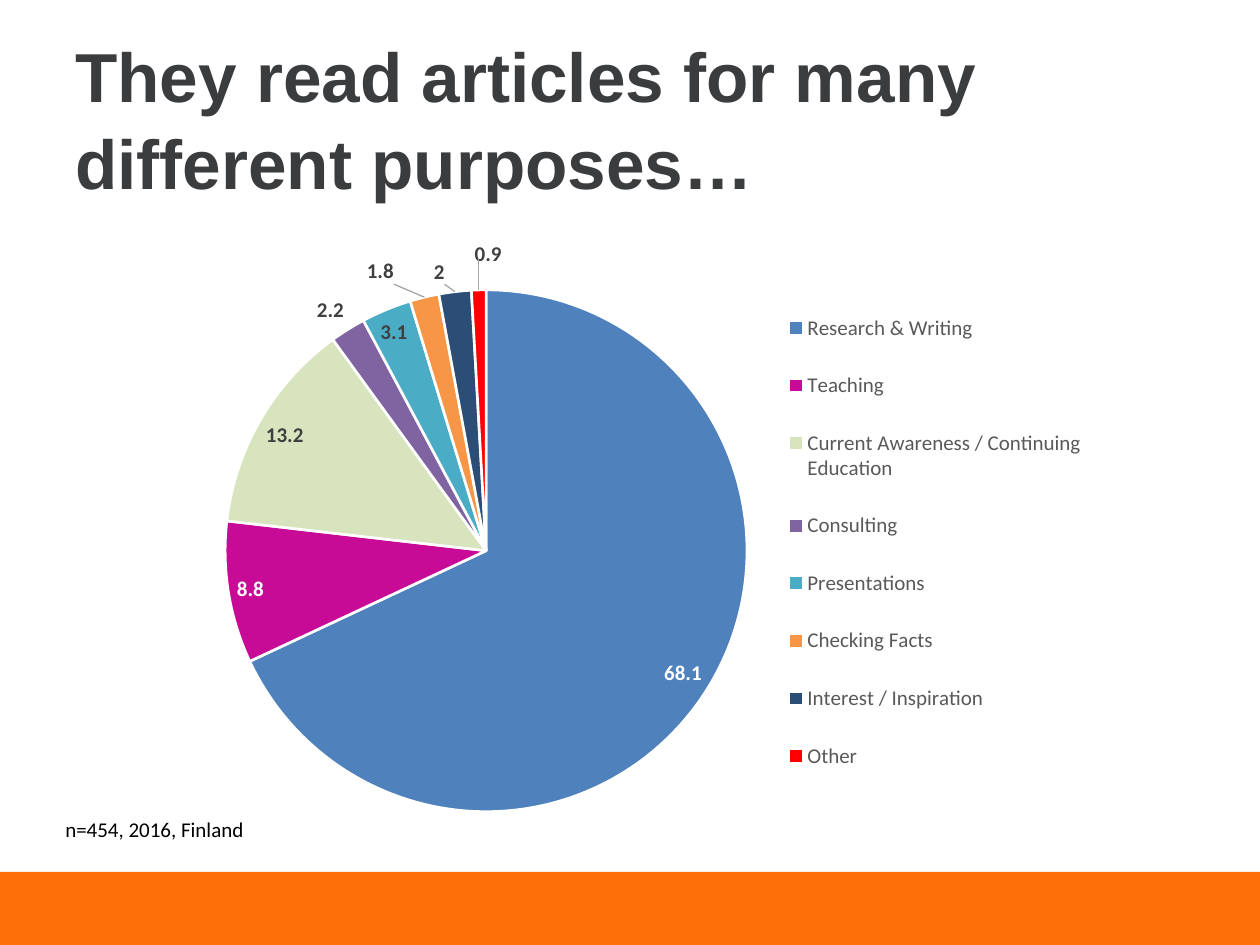
from pptx import Presentation
from pptx.chart.data import CategoryChartData
from pptx.dml.color import RGBColor
from pptx.enum.chart import XL_CHART_TYPE, XL_LABEL_POSITION, XL_LEGEND_POSITION
from pptx.enum.shapes import MSO_SHAPE
from pptx.enum.text import MSO_ANCHOR
from pptx.oxml import parse_xml
from pptx.oxml.ns import nsdecls
from pptx.util import Inches, Pt

PIE = XL_CHART_TYPE.PIE
FIT = XL_LABEL_POSITION.BEST_FIT
OUT = XL_LABEL_POSITION.OUTSIDE_END
RIGHT = XL_LEGEND_POSITION.RIGHT
RECT = MSO_SHAPE.RECTANGLE
TOP, MIDDLE = MSO_ANCHOR.TOP, MSO_ANCHOR.MIDDLE

BLACK = RGBColor(0x00, 0x00, 0x00)
WHITE = RGBColor(0xFF, 0xFF, 0xFF)
ORANGE = RGBColor(0xFD, 0x6D, 0x08)
INK = RGBColor(0x3B, 0x3C, 0x3E)
DARK = RGBColor(0x40, 0x40, 0x40)
GREY = RGBColor(0x59, 0x59, 0x59)
BLUE = RGBColor(0x4F, 0x81, 0xBD)
PINK = RGBColor(0xC7, 0x0B, 0x96)
LIME = RGBColor(0xD7, 0xE4, 0xBD)
PURPLE = RGBColor(0x80, 0x64, 0xA2)
TEAL = RGBColor(0x4B, 0xAC, 0xC6)
AMBER = RGBColor(0xF7, 0x96, 0x46)
NAVY = RGBColor(0x2C, 0x4D, 0x75)
RED = RGBColor(0xFF, 0x00, 0x00)

SLICES = [
    ("Research & Writing", 68.1, BLUE),
    ("Teaching", 8.8, PINK),
    ("Current Awareness / Continuing Education", 13.2, LIME),
    ("Consulting", 2.2, PURPLE),
    ("Presentations", 3.1, TEAL),
    ("Checking Facts", 1.8, AMBER),
    ("Interest / Inspiration", 2, NAVY),
    ("Other", 0.9, RED),
]
LIGHT = (0, 1)
SHIFTS = {5: (-0.03, -0.01), 6: (-0.01, 0), 7: (0.01, -0.04)}


def layout(**parts):
    """Return a manual chart layout with the given parts."""
    body = "".join(f'<c:{tag} val="{val}"/>' for tag, val in parts.items())
    return parse_xml(f'<c:layout {nsdecls("c")}><c:manualLayout>{body}'
                     '</c:manualLayout></c:layout>')


def frame(x, y, w, h, **target):
    """Return a layout placed by fractions of the chart."""
    return layout(**target, xMode="edge", yMode="edge", x=x, y=y, w=w, h=h)


def place(node, index, new):
    """Put a layout in a chart node, replacing any old one."""
    for old in node.xpath("./c:layout"):
        node.remove(old)
    node.insert(index, new)


def style(font, size, color, bold=False, name="Calibri"):
    """Set the main traits of a font."""
    font.name, font.size, font.bold = name, Pt(size), bold
    font.color.rgb = color


class Deck:
    """Holds the presentation and the current slide."""

    def __init__(self):
        self.prs = Presentation()
        self.prs.slide_width = Inches(10)
        self.prs.slide_height = Inches(7.5)
        self.slide = self.prs.slides.add_slide(self.prs.slide_layouts[6])

    def bar(self, box, color):
        """Add a plain filled bar."""
        shape = self.slide.shapes.add_shape(RECT, *map(Inches, box))
        shape.shadow.inherit = False
        shape.fill.solid()
        shape.fill.fore_color.rgb = color
        shape.line.fill.background()

    def text(self, box, words, anchor=TOP, space=1.0, **traits):
        """Add a wrapped text box."""
        frame = self.slide.shapes.add_textbox(*map(Inches, box)).text_frame
        frame.word_wrap = True
        frame.vertical_anchor = anchor
        para = frame.paragraphs[0]
        para.text = words
        para.line_spacing = space
        style(para.font, **traits)

    def pie(self, box, slices):
        """Add a pie chart with value labels and a legend."""
        data = CategoryChartData()
        data.categories = [name for name, _, _ in slices]
        data.add_series("Series 1", [val for _, val, _ in slices])
        chart = self.slide.shapes.add_chart(PIE, *map(Inches, box), data).chart
        chart.has_title = False
        style(chart.font, 10, BLACK)
        chart.has_legend = True
        chart.legend.position = RIGHT
        chart.legend.include_in_layout = False
        style(chart.legend.font, 12, GREY)
        chart.plots[0].vary_by_categories = True
        series = chart.plots[0].series[0]
        labels = series.data_labels
        labels.show_value = True
        labels.position = FIT
        style(labels.font, 12, DARK, True)
        for i, (_, _, color) in enumerate(slices):
            point = series.points[i]
            point.format.fill.solid()
            point.format.fill.fore_color.rgb = color
            point.format.line.color.rgb = WHITE
            point.format.line.width = Pt(1.5)
            if i in LIGHT or i in SHIFTS:
                label = point.data_label
                style(label.font, 12, WHITE if i in LIGHT else DARK, True)
                label.position = OUT if i in SHIFTS else FIT
        root = chart.element
        for i, (x, y) in SHIFTS.items():
            place(root.xpath(f".//c:dLbl[c:idx/@val={i}]")[0], 1, layout(x=x, y=y))
        place(root.xpath(".//c:plotArea")[0], 0,
              frame(0.07, 0.08, 0.54, 0.89, layoutTarget="inner"))
        place(root.xpath(".//c:legend")[0], 1, frame(0.64, 0.07, 0.33, 0.88))
        for lead in root.xpath(".//c:ser/c:dLbls/c:showLeaderLines"):
            lead.set("val", "1")
            lead.addnext(parse_xml(
                f'<c:leaderLines {nsdecls("c", "a")}><c:spPr><a:ln w="9525">'
                '<a:solidFill><a:srgbClr val="A6A6A6"/></a:solidFill>'
                '</a:ln></c:spPr></c:leaderLines>'))


def main():
    deck = Deck()
    deck.bar((0, 6.92, 10, 0.58), ORANGE)
    deck.text((0.5, 0.3, 9, 1.25), "They read articles for many different purposes…",
              MIDDLE, 1.05, size=39.6, color=INK, bold=True, name="Arial")
    deck.pie((1.25, 1.92, 7.67, 4.67), SLICES)
    deck.text((0.42, 6.43, 2, 0.3), "n=454, 2016, Finland", size=12, color=BLACK)
    deck.prs.save("out.pptx")


if __name__ == "__main__":
    main()
